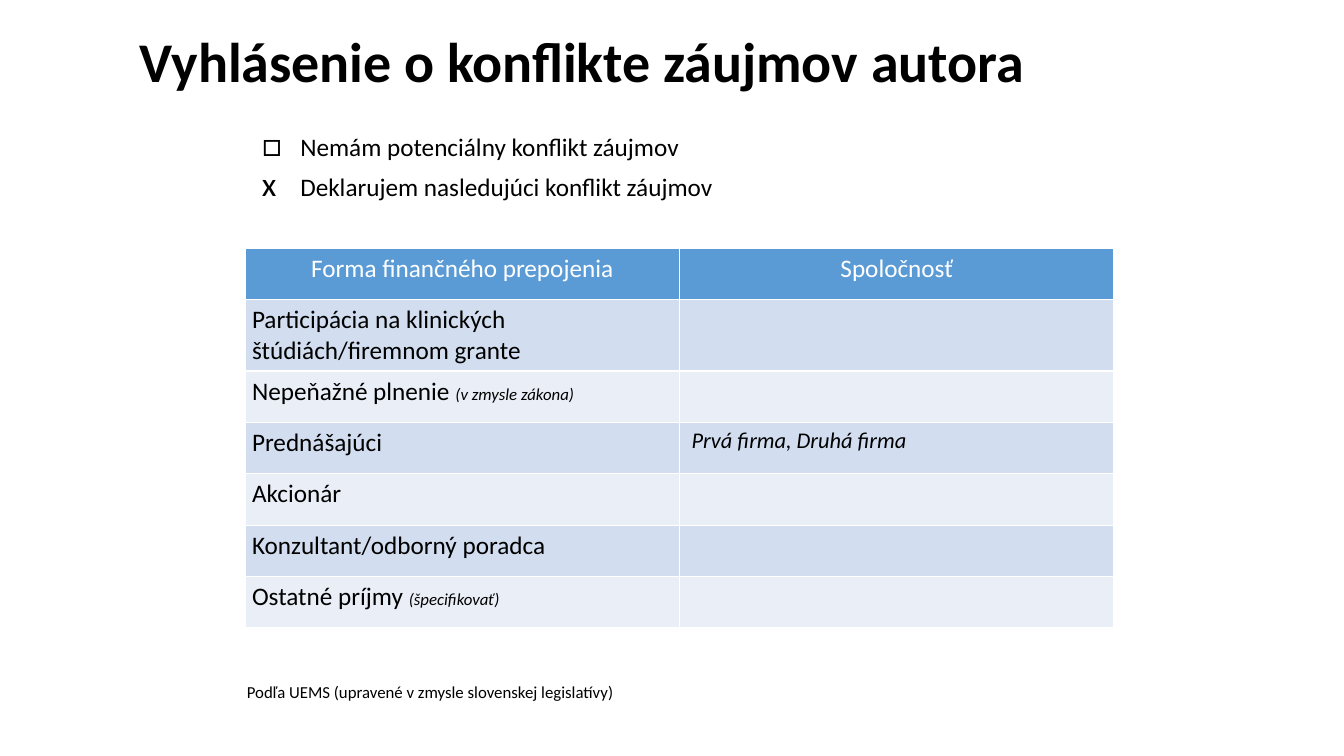
from pptx import Presentation
from pptx.dml.color import RGBColor
from pptx.enum.text import MSO_ANCHOR, PP_ALIGN
from pptx.util import Inches, Pt

BLACK = RGBColor(0x00, 0x00, 0x00)
WHITE = RGBColor(0xFF, 0xFF, 0xFF)
HEADER_BLUE = RGBColor(0x5B, 0x9B, 0xD5)
BAND_COLORS = [RGBColor(0xEA, 0xEF, 0xF7), RGBColor(0xD2, 0xDE, 0xEF)]

HEADINGS = ["Forma finančného prepojenia", "Spoločnosť"]
# Form of the link, its remark in small italics, company
LINKS = [
    ("Participácia na klinických štúdiách/firemnom grante", "", ""),
    ("Nepeňažné plnenie ", "(v zmysle zákona)", ""),
    ("Prednášajúci", "", "Prvá firma, Druhá firma"),
    ("Akcionár", "", ""),
    ("Konzultant/odborný poradca", "", ""),
    ("Ostatné príjmy ", "(špecifikovať)", ""),
]
CHOICES = [
    ("□", "Nemám potenciálny konflikt záujmov"),
    ("x", "Deklarujem nasledujúci konflikt záujmov"),
]


def add_span(para, text, size, color=BLACK, bold=False, italic=False):
    span = para.add_run()
    span.text = text
    span.font.name = "Calibri"
    span.font.size = Pt(size)
    span.font.color.rgb = color
    span.font.bold = bold
    span.font.italic = italic


deck = Presentation()
deck.slide_width = Inches(13.33)
deck.slide_height = Inches(7.5)
page = deck.slides.add_slide(deck.slide_layouts[5])

# Title
title = page.shapes.title
title.left, title.top = Inches(-0.88), Inches(-0.57)
title.width, title.height = Inches(13.3), Inches(2.42)
title.text_frame.vertical_anchor = MSO_ANCHOR.MIDDLE
title_para = title.text_frame.paragraphs[0]
title_para.alignment = PP_ALIGN.CENTER
title_para.line_spacing = 0.9
add_span(title_para, "Vyhlásenie o konflikte záujmov autora", 40, bold=True)

# Table of financial links
table = page.shapes.add_table(
    len(LINKS) + 1, 2, Inches(2.43), Inches(2.46), Inches(8.62), Inches(3.57)
).table
for row in table.rows:
    row.height = Inches(0.51)
for row_index, row in enumerate(table.rows):
    for cell in row.cells:
        cell.margin_left = cell.margin_right = Inches(0.07)
        cell.margin_top = cell.margin_bottom = Inches(0.05)
        cell.fill.solid()
        cell.fill.fore_color.rgb = BAND_COLORS[row_index % 2] if row_index else HEADER_BLUE

for column, heading in enumerate(HEADINGS):
    para = table.cell(0, column).text_frame.paragraphs[0]
    para.alignment = PP_ALIGN.CENTER
    add_span(para, heading, 18, WHITE)

for row_index, (form, remark, company) in enumerate(LINKS, start=1):
    form_para = table.cell(row_index, 0).text_frame.paragraphs[0]
    add_span(form_para, form, 18)
    if remark:
        add_span(form_para, remark, 12, italic=True)
    if company:
        company_cell = table.cell(row_index, 1)
        company_cell.margin_left = Inches(0.12)
        add_span(company_cell.text_frame.paragraphs[0], company, 16, italic=True)

# Choices, with the text hanging after each mark
choice_box = page.shapes.add_textbox(Inches(2.5), Inches(1.17), Inches(5.71), Inches(0.91))
choice_frame = choice_box.text_frame
choice_frame.word_wrap = True
for index, (mark, choice) in enumerate(CHOICES):
    para = choice_frame.add_paragraph() if index else choice_frame.paragraphs[0]
    properties = para._p.get_or_add_pPr()
    properties.set("marL", str(Inches(0.38)))
    properties.set("indent", str(Inches(-0.38)))
    add_span(para, mark, 24)
    add_span(para, "\t" + choice, 18)

# Source note
note_box = page.shapes.add_textbox(Inches(2.35), Inches(6.71), Inches(3.88), Inches(0.3))
note_box.text_frame.word_wrap = False
add_span(
    note_box.text_frame.paragraphs[0],
    "Podľa UEMS (upravené v zmysle slovenskej legislatívy)",
    12,
)

deck.save("out.pptx")
